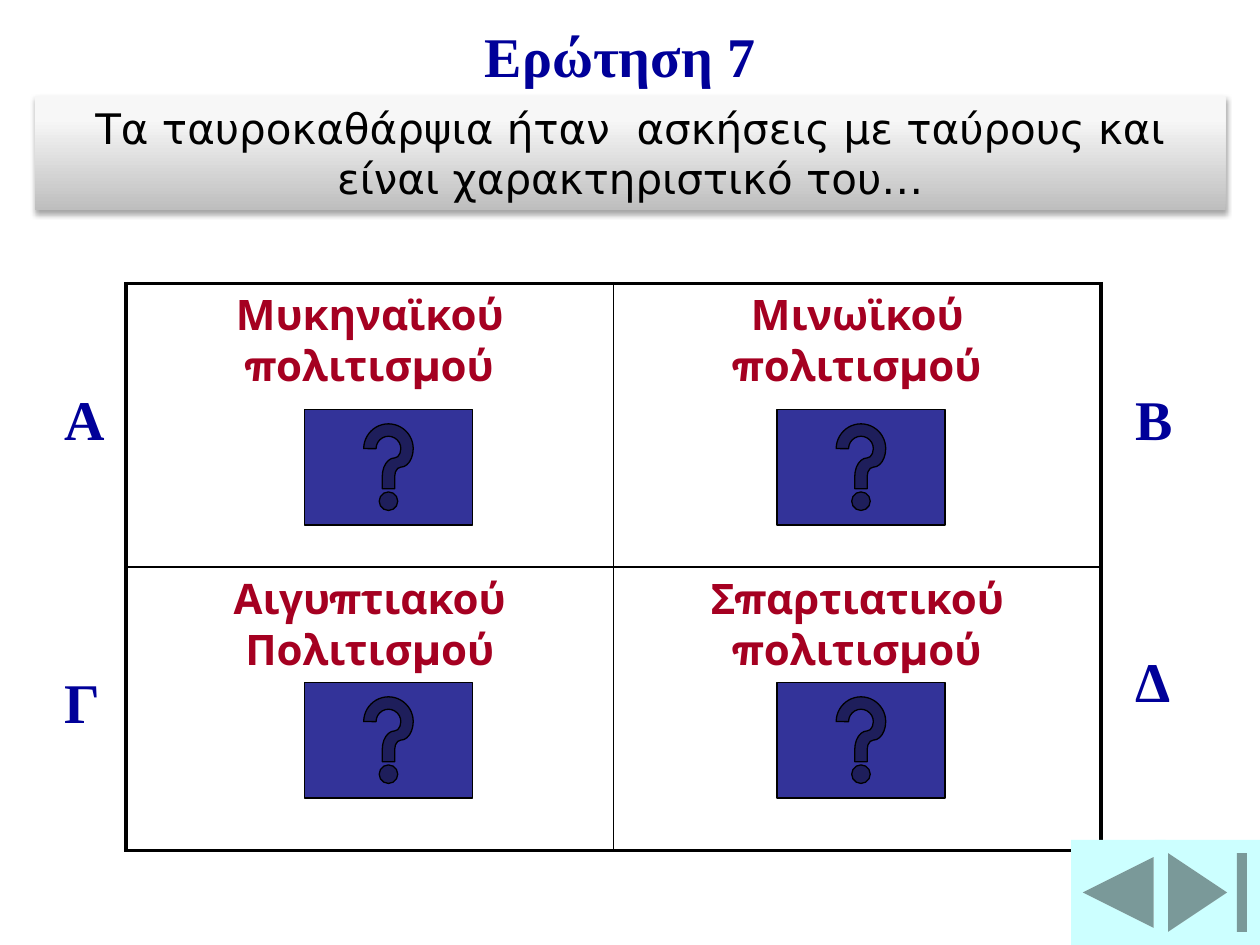
from itertools import product

from lxml.etree import SubElement
from pptx import Presentation
from pptx.dml.color import RGBColor
from pptx.enum.shapes import MSO_SHAPE as Kind
from pptx.enum.text import MSO_ANCHOR as Anchor
from pptx.enum.text import MSO_AUTO_SIZE as Fit
from pptx.enum.text import PP_ALIGN as Align
from pptx.oxml import parse_xml
from pptx.oxml.ns import nsdecls, qn
from pptx.util import Pt

NAVY = RGBColor(0x00, 0x00, 0x99)
RED = RGBColor(0xA5, 0x00, 0x21)
BLUE = RGBColor(0x33, 0x33, 0x99)
CYAN = RGBColor(0xCC, 0xFF, 0xFF)
GREY = RGBColor(0xBE, 0xBE, 0xBE)
PALE = RGBColor(0xF7, 0xF7, 0xF7)
BLACK = RGBColor(0x00, 0x00, 0x00)
WHITE = RGBColor(0xFF, 0xFF, 0xFF)

THICK, THIN = 2.25, 1

ANSWERS = [
    ["Μυκηναϊκού πολιτισμού", "Μινωϊκού πολιτισμού"],
    ["Αιγυπτιακού Πολιτισμού", "Σπαρτιατικού πολιτισμού"],
]
LABELS = [("Α", 30, 216), ("Γ", 30, 378), ("Β", 642, 216), ("Δ", 642, 366)]

SHADOW = (
    f'<a:effectLst {nsdecls("a")}>'
    '<a:outerShdw blurRad="39370" dist="22860" dir="5400000" rotWithShape="0">'
    '<a:srgbClr val="000000"><a:alpha val="35000"/></a:srgbClr>'
    "</a:outerShdw></a:effectLst>"
)


def add_run(frame, text, font, size, color, bold=False, align=Align.LEFT):
    para = frame.paragraphs[0]
    para.alignment = align
    run = para.add_run()
    run.text = text
    run.font.name = font
    run.font.size = Pt(size)
    run.font.bold = bold
    run.font.color.rgb = color


def add_label(slide, text, left, top, width=36):
    box = slide.shapes.add_textbox(Pt(left), Pt(top), Pt(width), Pt(45))
    frame = box.text_frame
    frame.word_wrap = True
    frame.auto_size = Fit.SHAPE_TO_FIT_TEXT
    add_run(frame, text, "Times New Roman", 32, NAVY, bold=True)


def add_button(slide, kind, left, top, width, height, color, line=None):
    shape = slide.shapes.add_shape(kind, Pt(left), Pt(top), Pt(width), Pt(height))
    shape.shadow.inherit = False
    shape.fill.solid()
    shape.fill.fore_color.rgb = color
    if line is None:
        shape.line.fill.background()
    else:
        shape.line.color.rgb = line
        shape.line.width = Pt(0.75)


def set_edges(cell, widths):
    props = cell._tc.get_or_add_tcPr()
    for spot, (side, width) in enumerate(widths.items()):
        edge = props.makeelement(qn(f"a:ln{side}"), {"w": str(Pt(width))})
        fill = SubElement(edge, qn("a:solidFill"))
        SubElement(fill, qn("a:srgbClr"), val=str(BLACK))
        props.insert(spot, edge)


def add_grid(slide):
    shape = slide.shapes.add_table(2, 2, Pt(72), Pt(162), Pt(557.28), Pt(324))
    table = shape.table
    table.first_row = table.horz_banding = False
    for row, col in product(range(2), repeat=2):
        cell = table.cell(row, col)
        cell.fill.solid()
        cell.fill.fore_color.rgb = WHITE
        # Outer edges are thick, inner ones thin
        set_edges(cell, {
            "L": THIN if col else THICK,
            "R": THICK if col else THIN,
            "T": THIN if row else THICK,
            "B": THICK if row else THIN,
        })
        add_run(cell.text_frame, ANSWERS[row][col], "Montserrat", 24, RED,
                bold=True, align=Align.CENTER)


def add_banner(slide, text):
    shape = slide.shapes.add_shape(
        Kind.RECTANGLE, Pt(20), Pt(54.8), Pt(680.4), Pt(65.5))
    shape.line.fill.background()
    shape.fill.gradient()
    shape.fill.gradient_angle = 90
    for stop, (spot, color) in zip(shape.fill.gradient_stops,
                                   [(0, GREY), (0.8, PALE)]):
        stop.position = spot
        stop.color.rgb = color
    shape._element.spPr.append(parse_xml(SHADOW))
    frame = shape.text_frame
    frame.word_wrap = True
    frame.auto_size = Fit.SHAPE_TO_FIT_TEXT
    frame.vertical_anchor = Anchor.TOP
    add_run(frame, text, "DejaVu Sans", 24, BLACK, align=Align.CENTER)


def main():
    deck = Presentation()
    deck.slide_width, deck.slide_height = Pt(720), Pt(540)
    slide = deck.slides.add_slide(deck.slide_layouts[6])

    # Answers with their letters
    add_grid(slide)
    for text, left, top in LABELS:
        add_label(slide, text, left, top)

    # Title
    add_label(slide, "Ερώτηση 7", 270, 9, 192)

    # One help button per answer
    for left, top in product((174, 444), (234, 390)):
        add_button(slide, Kind.ACTION_BUTTON_HELP, left, top, 96, 66, BLUE, BLACK)

    # Navigation
    add_button(slide, Kind.ACTION_BUTTON_END, 660, 480, 60, 60, CYAN)
    add_button(slide, Kind.ACTION_BUTTON_BACK_OR_PREVIOUS, 612, 480, 54, 60, CYAN)

    # Question
    add_banner(slide, "Τα ταυροκαθάρψια ήταν  ασκήσεις με ταύρους και "
                      "είναι χαρακτηριστικό του…")

    deck.save("out.pptx")


if __name__ == "__main__":
    main()
